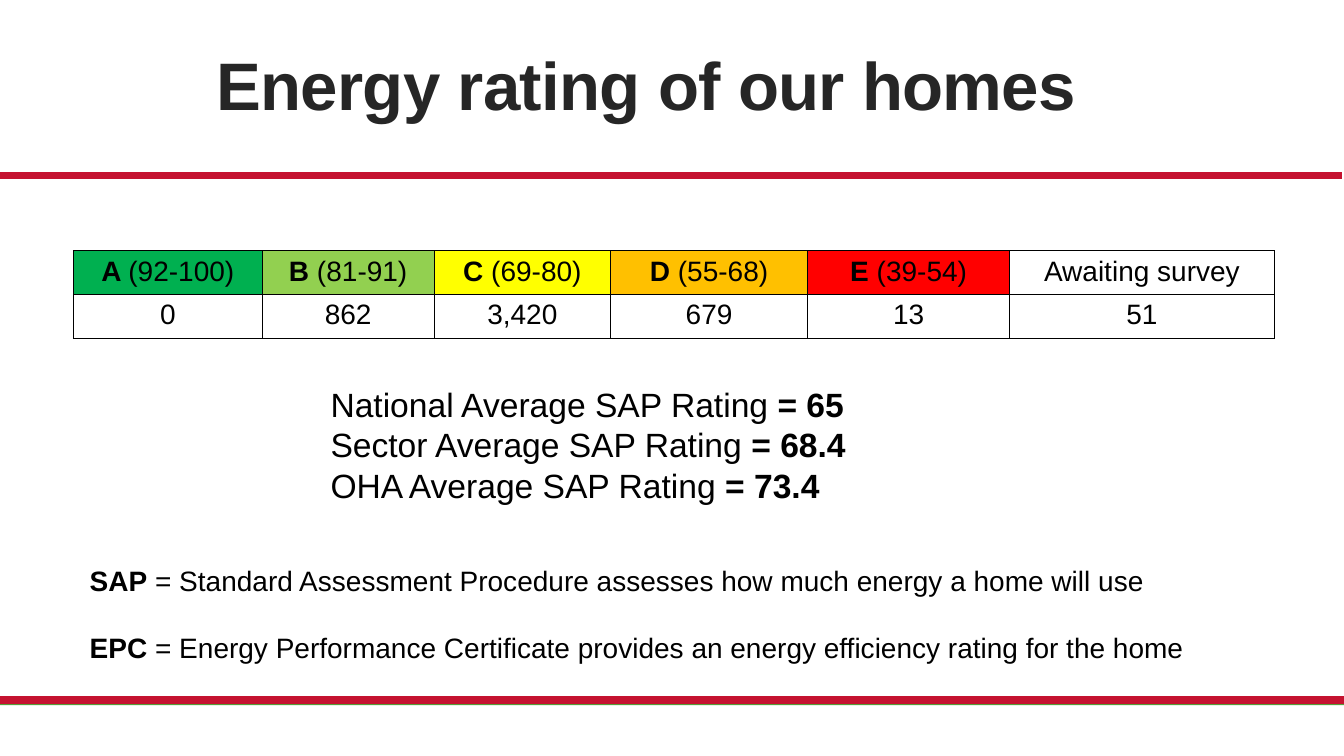
from lxml import etree
from pptx import Presentation
from pptx.dml.color import RGBColor
from pptx.enum.shapes import MSO_SHAPE
from pptx.enum.text import MSO_ANCHOR, PP_ALIGN
from pptx.oxml.ns import qn
from pptx.util import Cm, Pt

RECT = MSO_SHAPE.RECTANGLE
TOP, BOTTOM = MSO_ANCHOR.TOP, MSO_ANCHOR.BOTTOM
LEFT, CENTER = PP_ALIGN.LEFT, PP_ALIGN.CENTER

BLACK = RGBColor(0x00, 0x00, 0x00)
DARK = RGBColor(0x26, 0x26, 0x26)
RED = RGBColor(0xC5, 0x12, 0x30)
GREEN = RGBColor(0x54, 0x9E, 0x39)

BANDS = [
    RGBColor(0x00, 0xB0, 0x50),
    RGBColor(0x92, 0xD0, 0x50),
    RGBColor(0xFF, 0xFF, 0x00),
    RGBColor(0xFF, 0xC0, 0x00),
    RGBColor(0xFF, 0x00, 0x00),
    None,
]
# Each text is a list of (words, bold) runs.
RATINGS = [
    [("A ", True), ("(92-100)", False)],
    [("B", True), (" (81-91)", False)],
    [("C ", True), ("(69-80)", False)],
    [("D", True), (" (55-68)", False)],
    [("E", True), (" (39-54)", False)],
    [("Awaiting survey", False)],
]
HOMES = [[(count, False)] for count in ("0", "862", "3,420", "679", "13", "51")]
WIDTHS = [4.76, 4.33, 4.45, 4.96, 5.1, 6.66]
SCORES = [
    [("National Average SAP Rating ", False), ("= 65", True)],
    [("Sector Average SAP Rating ", False), ("= 68.4", True)],
    [("OHA Average SAP Rating ", False), ("= 73.4", True)],
]
TERMS = [
    [("SAP", True),
     (" = Standard Assessment Procedure assesses how much energy a home will use", False)],
    [("EPC", True),
     (" = Energy Performance Certificate provides an energy efficiency rating for the home", False)],
]


class Painter:
    """Draws elements on one slide in a shared style; lengths are in cm."""

    def __init__(self, slide, font="Arial"):
        self.shapes = slide.shapes
        self.font = font

    def letter(self, para, runs, size, color=BLACK, align=LEFT):
        """Put styled runs into a paragraph."""
        para.alignment = align
        font = para.font
        font.name, font.size = self.font, Pt(size)
        font.color.rgb = color
        for words, bold in runs:
            run = para.add_run()
            run.text = words
            run.font.bold = bold

    def bar(self, left, top, width, color, edge=False):
        bar = self.shapes.add_shape(RECT, Cm(left), Cm(top), Cm(width), Cm(0.17))
        bar.shadow.inherit = False
        bar.fill.solid()
        bar.fill.fore_color.rgb = color
        if edge:
            bar.line.color.rgb = color
            bar.line.width = Pt(1.25)
        else:
            bar.line.fill.background()

    def text(self, left, top, width, height, lines, size,
             color=BLACK, anchor=TOP, gap=0):
        box = self.shapes.add_textbox(Cm(left), Cm(top), Cm(width), Cm(height))
        frame = box.text_frame
        frame.word_wrap = True
        frame.vertical_anchor = anchor
        for i, runs in enumerate(lines):
            para = frame.add_paragraph() if i else frame.paragraphs[0]
            if i and gap:
                para.space_before = Pt(gap)
            self.letter(para, runs, size, color)
        return frame

    def border(self, cell):
        """Put a thin black line on all four sides of a cell."""
        props = cell._tc.get_or_add_tcPr()
        for i, side in enumerate(("a:lnL", "a:lnR", "a:lnT", "a:lnB")):
            line = etree.Element(qn(side), w=str(Pt(1)))
            fill = etree.SubElement(line, qn("a:solidFill"))
            etree.SubElement(fill, qn("a:srgbClr"), val=str(BLACK))
            props.insert(i, line)

    def table(self, left, top, widths, height, rows, fills, size):
        """Fill the first row with the given colours; None leaves a cell clear."""
        frame = self.shapes.add_table(
            len(rows), len(widths), Cm(left), Cm(top),
            Cm(sum(widths)), Cm(height * len(rows)))
        grid = frame.table
        for col, width in zip(grid.columns, widths):
            col.width = Cm(width)
        for r, row in enumerate(rows):
            grid.rows[r].height = Cm(height)
            for c, runs in enumerate(row):
                cell = grid.cell(r, c)
                if r == 0 and fills[c] is not None:
                    cell.fill.solid()
                    cell.fill.fore_color.rgb = fills[c]
                else:
                    cell.fill.background()
                self.border(cell)
                para = cell.text_frame.paragraphs[0]
                self.letter(para, runs, size, align=CENTER)
                for run in para.runs:
                    run.font.color.rgb = BLACK


def main():
    deck = Presentation()
    deck.slide_width, deck.slide_height = Cm(33.87), Cm(19.05)
    paint = Painter(deck.slides.add_slide(deck.slide_layouts[6]))

    paint.bar(0, 17.6, 33.87, GREEN)
    paint.bar(0, 17.55, 33.87, RED, edge=True)
    paint.bar(-0.05, 4.34, 33.87, RED)

    title = paint.text(5.2, 0.69, 26.97, 2.57,
                       [[("Energy rating of our homes", True)]], 48, DARK, BOTTOM)
    head = title.paragraphs[0]
    head.line_spacing = 0.85
    head.runs[0]._r.get_or_add_rPr().set("spc", "-50")

    paint.table(1.85, 6.32, WIDTHS, 1.04, [RATINGS, HOMES], BANDS, 20)
    paint.text(8.08, 9.55, 16.97, 3.33, SCORES, 24)
    paint.text(2.01, 14.07, 30.12, 2.82, TERMS, 20, gap=24)

    deck.save("out.pptx")


if __name__ == "__main__":
    main()
